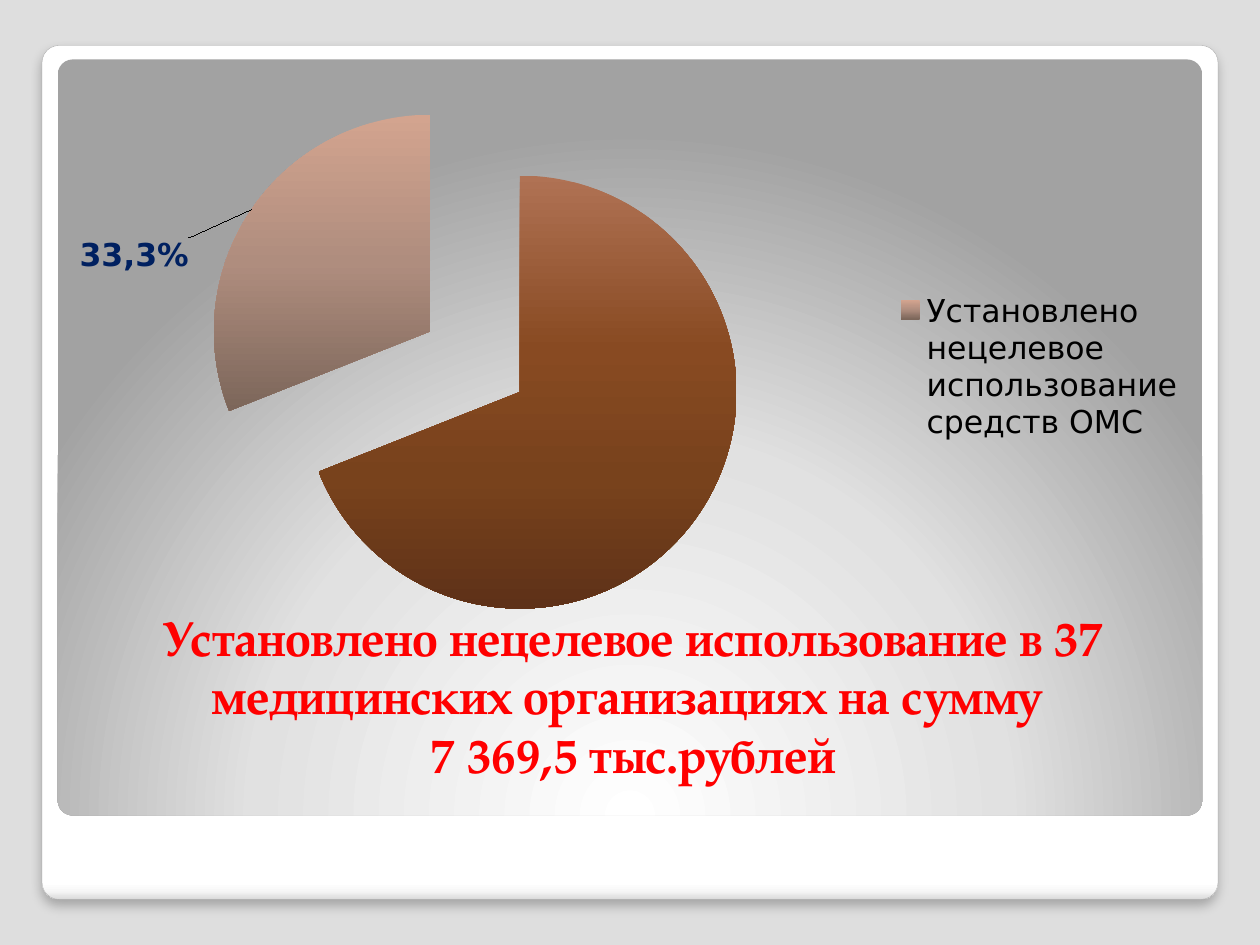
from lxml import etree
from pptx import Presentation
from pptx.chart.data import CategoryChartData
from pptx.dml.color import RGBColor
from pptx.enum.chart import XL_CHART_TYPE, XL_LABEL_POSITION, XL_LEGEND_POSITION
from pptx.enum.shapes import MSO_SHAPE
from pptx.enum.text import MSO_ANCHOR, PP_ALIGN
from pptx.oxml import parse_xml
from pptx.oxml.ns import qn
from pptx.util import Pt

PIE = XL_CHART_TYPE.PIE
OUTSIDE_END = XL_LABEL_POSITION.OUTSIDE_END
LEGEND_RIGHT = XL_LEGEND_POSITION.RIGHT
ROUNDED = MSO_SHAPE.ROUNDED_RECTANGLE
BOTTOM = MSO_ANCHOR.BOTTOM
CENTER = PP_ALIGN.CENTER

COLORS = {
    "background": "DEDEDE",
    "frame_line": "A4A4A4",
    "shadow": "000000",
    "title": "FF0000",
    "chart_text": "000000",
    "label": "002060",
}
FRAME_STOPS = [(0, "FFFFFF"), (98, "FFFFFF"), (99, "F7F7F7"), (100, "DADADA")]
PANEL_STOPS = [(0, "FFFFFF"), (55, "E1E1E1"), (100, "A2A2A2")]
SLICE_STOPS = [
    [(0, "B07254"), (40, "884A22"), (70, "78421C"), (100, "5E3118")],
    [(0, "D3A48F"), (50, "AF8D7E"), (100, "7C665A")],
]
DOWNWARD = '<a:lin ang="5400000" scaled="0"/>'
FROM_BELOW = ('<a:path path="circle"><a:fillToRect l="50000" t="175000" '
              'r="50000" b="-75000"/></a:path>')
DRAWING_NS = "http://schemas.openxmlformats.org/drawingml/2006/main"

TITLE_FONT, CHART_FONT = "TeX Gyre Pagella", "DejaVu Sans"
TITLE = ("Установлено нецелевое использование в 37 медицинских организациях "
         "на сумму \v7 369,5 тыс.рублей")
SLICES = {"": 69, "Установлено нецелевое использование средств ОМС": 31}


def rgb(name):
    return RGBColor.from_string(COLORS[name])


def style_font(font, face, size, color, bold=False):
    font.name, font.size, font.bold = face, Pt(size), bold
    font.color.rgb = rgb(color)


def set_gradient(fill, properties, stops, direction):
    """Fill the shape properties element with a multi-stop gradient."""
    fill.solid()
    stop_xml = "".join(
        f'<a:gs pos="{pos * 1000}"><a:srgbClr val="{color}"/></a:gs>'
        for pos, color in stops)
    gradient = parse_xml(f'<a:gradFill xmlns:a="{DRAWING_NS}" rotWithShape="1">'
                         f'<a:gsLst>{stop_xml}</a:gsLst>{direction}</a:gradFill>')
    properties.replace(properties.find(qn("a:solidFill")), gradient)


def add_panel(slide, left, top, width, height, stops, direction):
    panel = slide.shapes.add_shape(ROUNDED, Pt(left), Pt(top), Pt(width), Pt(height))
    panel.adjustments[0] = 0.02
    panel.shadow.inherit = False
    panel.line.fill.background()
    set_gradient(panel.fill, panel._element.spPr, stops, direction)
    return panel


def add_soft_shadow(panel):
    effects = panel._element.spPr.find(qn("a:effectLst"))
    effects.append(parse_xml(
        f'<a:outerShdw xmlns:a="{DRAWING_NS}" blurRad="{Pt(6)}" dist="{Pt(4)}" '
        f'dir="5400000" rotWithShape="0"><a:srgbClr val="{COLORS["shadow"]}">'
        '<a:alpha val="25000"/></a:srgbClr></a:outerShdw>'))


def set_title(slide):
    title = slide.shapes.title
    title.left, title.top, title.width, title.height = Pt(39.6), Pt(360.7), Pt(644.4), Pt(90.7)
    frame = title.text_frame
    frame.text = TITLE
    frame.word_wrap = True
    frame.vertical_anchor = BOTTOM
    paragraph = frame.paragraphs[0]
    paragraph.alignment = CENTER
    for run in paragraph.runs:
        style_font(run.font, TITLE_FONT, 28, "title", bold=True)
    # Keep the title in front of the panels
    slide.shapes._spTree.append(title._element)


def make_layout(**values):
    """Manual chart layout, in fractions of the chart area."""
    layout = etree.Element(qn("c:layout"))
    manual = etree.SubElement(layout, qn("c:manualLayout"))
    for tag, value in values.items():
        etree.SubElement(manual, qn(f"c:{tag}")).set("val", str(value))
    return layout


def place(parent, layout, after=None):
    for old in parent.findall(qn("c:layout")):
        parent.remove(old)
    if after is None:
        parent.insert(0, layout)
    else:
        parent.find(qn(after)).addnext(layout)


def add_pie(slide):
    data = CategoryChartData()
    data.categories = list(SLICES)
    data.add_series("Series 1", list(SLICES.values()))
    chart = slide.shapes.add_chart(
        PIE, Pt(39.6), Pt(41.8), Pt(644.4), Pt(329.8), data).chart
    chart.has_title = False
    style_font(chart.font, CHART_FONT, 18, "chart_text")
    plot_area = chart.element.find(".//" + qn("c:plotArea"))
    place(plot_area, make_layout(layoutTarget="inner", xMode="edge", yMode="edge",
                                 x=0.12, y=0.03, w=0.48, h=0.94))

    # Slices
    chart.plots[0].vary_by_categories = True
    series = chart.plots[0].series[0]
    for index, stops in enumerate(SLICE_STOPS):
        fill = series.points[index].format.fill
        fill.solid()
        properties = plot_area.findall(".//" + qn("c:dPt"))[index].find(qn("c:spPr"))
        set_gradient(fill, properties, stops, DOWNWARD)
    explosion = etree.Element(qn("c:explosion"))
    explosion.set("val", "25")
    plot_area.find(".//" + qn("c:dPt")).addprevious(explosion)

    # Share label beside the smaller slice
    label = series.points[1].data_label
    label.text_frame.text = "33,3%"
    style_font(label.text_frame.paragraphs[0].runs[0].font, CHART_FONT, 18, "label", bold=True)
    label.position = OUTSIDE_END
    place(plot_area.find(".//" + qn("c:dLbl")), make_layout(x=-0.05, y=0.12), after="c:idx")
    add_legend(chart)


def add_legend(chart):
    chart.has_legend = True
    chart.legend.position = LEGEND_RIGHT
    chart.legend.include_in_layout = False
    style_font(chart.legend.font, CHART_FONT, 18, "chart_text")
    legend = chart.element.find(".//" + qn("c:legend"))
    place(legend, make_layout(xMode="edge", yMode="edge", x=0.73, y=0.36, w=0.26, h=0.3),
          after="c:legendPos")
    # Hide the entry of the unnamed slice
    entry = etree.Element(qn("c:legendEntry"))
    for tag, value in (("c:idx", "0"), ("c:delete", "1")):
        etree.SubElement(entry, qn(tag)).set("val", value)
    legend.find(qn("c:legendPos")).addnext(entry)


def main():
    deck = Presentation()
    deck.slide_width, deck.slide_height = Pt(720), Pt(540)
    slide = deck.slides.add_slide(deck.slide_layouts[5])
    slide.background.fill.solid()
    slide.background.fill.fore_color.rgb = rgb("background")

    # White frame with the grey panel inside
    frame = add_panel(slide, 24, 26, 672, 488, FRAME_STOPS, DOWNWARD)
    frame.line.color.rgb = rgb("frame_line")
    frame.line.width = Pt(0.16)
    add_soft_shadow(frame)
    add_panel(slide, 33, 34, 654, 432, PANEL_STOPS, FROM_BELOW)

    set_title(slide)
    add_pie(slide)
    deck.save("out.pptx")


if __name__ == "__main__":
    main()
